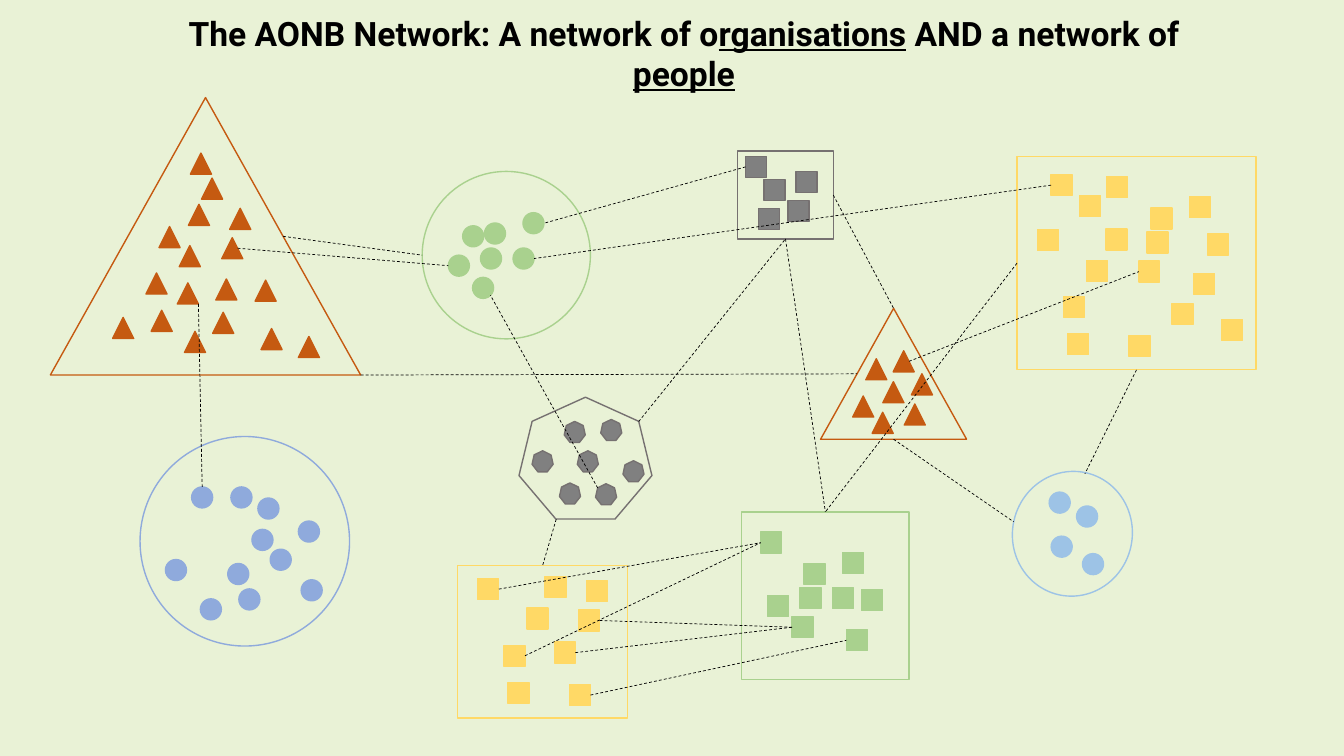
from lxml.etree import SubElement
from pptx import Presentation
from pptx.dml.color import RGBColor
from pptx.enum.dml import MSO_LINE
from pptx.enum.shapes import MSO_CONNECTOR, MSO_SHAPE as SHAPE
from pptx.enum.text import MSO_ANCHOR, PP_ALIGN
from pptx.oxml.ns import qn
from pptx.util import Cm, Pt

MEMBER_SIZE = 0.53

# name: (shape, fill, line, rotation, frame box, member offsets from the frame), in cm
ORGANISATIONS = {
    "green circle": (SHAPE.OVAL, "A9D18E", "A9D18E", 0, (10.64, 4.32, 4.24, 4.22), [
        (1.02, 1.37), (0.66, 2.11), (1.47, 1.93), (1.57, 1.3), (2.29, 1.93),
        (1.27, 2.67), (2.54, 1.04)]),
    "blue circle": (SHAPE.OVAL, "8FAADC", "8FAADC", 0, (3.53, 11, 5.28, 5.28), [
        (1.3, 1.27), (0.64, 3.1), (1.52, 4.09), (2.29, 1.27), (3.28, 2.84), (2.49, 3.84),
        (2.97, 1.55), (4.06, 3.61), (2.82, 2.34), (3.99, 2.13), (2.21, 3.2)]),
    "green square": (SHAPE.RECTANGLE, "A9D18E", "A9D18E", 0, (18.69, 12.9, 4.22, 4.22), [
        (0.48, 0.51), (0.66, 2.11), (1.47, 1.91), (1.57, 1.3), (2.29, 1.91),
        (1.27, 2.64), (2.54, 1.02), (2.64, 2.97), (3.02, 1.96)]),
    "large yellow": (SHAPE.RECTANGLE, "FFD966", "FFD966", 0, (25.63, 3.94, 6.02, 5.38), [
        (2.26, 0.51), (1.75, 2.62), (3.28, 1.91), (3.38, 1.3), (3.91, 3.71), (3.07, 2.64),
        (4.34, 1.02), (4.45, 2.95), (4.8, 1.96), (1.27, 4.47), (1.17, 3.53), (5.16, 4.11),
        (2.82, 4.52), (0.51, 1.85), (0.86, 0.46), (1.57, 0.99), (2.24, 1.83)]),
    "pale circle": (SHAPE.OVAL, "9DC3E6", "9DC3E6", 102.3, (25.45, 11.94, 3.15, 3.02), [
        (1.68, 0.81), (1.04, 1.57), (0.99, 0.46), (1.83, 2.01)]),
    "large triangle": (SHAPE.ISOSCELES_TRIANGLE, "C55A11", "C55A11", 0, (1.27, 2.46, 7.82, 6.99), [
        (3.53, 1.4), (3.25, 3.73), (4.52, 2.79), (2.74, 3.25), (5.16, 4.6), (4.32, 3.53),
        (5.31, 5.82), (3.38, 5.89), (4.17, 4.57), (2.54, 5.36), (2.41, 4.42), (6.25, 6.02),
        (4.09, 5.41), (3.2, 4.67), (1.57, 5.54), (3.81, 2.03), (3.48, 2.69)]),
    "grey square": (SHAPE.RECTANGLE, "808080", "767171", 0, (18.59, 3.81, 2.41, 2.21), [
        (0.66, 0.71), (1.47, 0.51), (0.2, 0.13), (1.27, 1.24), (0.53, 1.45)]),
    "small yellow": (SHAPE.RECTANGLE, "FFD966", "FFD966", 0, (11.53, 14.25, 4.29, 3.84), [
        (1.75, 1.07), (3.25, 0.38), (2.44, 1.93), (3.05, 1.12), (1.27, 2.95),
        (1.17, 2.01), (2.82, 3), (0.51, 0.33), (2.21, 0.28)]),
    "heptagon": (SHAPE.HEPTAGON, "808080", "767171", 0, (13.08, 10.01, 3.35, 3.07), [
        (2.06, 0.56), (1.47, 1.35), (0.33, 1.35), (1.93, 2.18), (1.02, 2.16),
        (1.14, 0.61), (2.62, 1.6)]),
    "small triangle": (SHAPE.ISOSCELES_TRIANGLE, "C55A11", "C55A11", 0, (20.68, 7.77, 3.68, 3.3), [
        (0.81, 2.21), (1.3, 2.62), (2.11, 2.41), (2.29, 1.65), (1.14, 1.27),
        (1.83, 1.07), (1.57, 1.85)]),
}

# Places on a shape, as fractions of its width and height
TOP, LEFT, BOTTOM, RIGHT = (0.5, 0), (0, 0.5), (0.5, 1), (1, 0.5)
LEFT_SLOPE, RIGHT_SLOPE, CORNER = (0.25, 0.5), (0.75, 0.5), (1, 1)

# Each end: organisation, part (0 is the frame, then the members), place
LINKS = [
    (("large triangle", 0, RIGHT_SLOPE), ("green circle", 0, LEFT)),
    (("large triangle", 0, CORNER), ("small triangle", 0, LEFT_SLOPE)),
    (("grey square", 0, BOTTOM), ("green square", 0, TOP)),
    (("large yellow", 0, LEFT), ("green square", 0, TOP)),
    (("large yellow", 0, BOTTOM), ("pale circle", 0, (0.6, 0))),
    (("heptagon", 0, (0.28, 1)), ("small yellow", 0, TOP)),
    (("heptagon", 4, (0.1, 0.2)), ("green circle", 6, (0.85, 0.85))),
    (("grey square", 3, LEFT), ("green circle", 7, RIGHT)),
    (("large yellow", 15, LEFT), ("green circle", 5, RIGHT)),
    (("small triangle", 0, BOTTOM), ("pale circle", 0, (0.03, 0.4))),
    (("heptagon", 0, (0.9, 0.2)), ("grey square", 0, BOTTOM)),
    (("small triangle", 6, RIGHT_SLOPE), ("large yellow", 6, LEFT)),
    (("large triangle", 6, RIGHT_SLOPE), ("green circle", 2, LEFT)),
    (("large triangle", 14, CORNER), ("blue circle", 1, TOP)),
    (("small yellow", 8, RIGHT), ("green square", 1, LEFT)),
    (("small yellow", 7, RIGHT), ("green square", 8, LEFT)),
    (("small yellow", 3, RIGHT), ("green square", 6, LEFT)),
    (("small yellow", 6, RIGHT), ("green square", 1, LEFT)),
    (("small yellow", 4, RIGHT), ("green square", 6, LEFT)),
    (("grey square", 0, RIGHT), ("small triangle", 0, TOP)),
]


def color(value):
    return RGBColor.from_string(value)


def add_title(slide, box):
    title = slide.shapes.title
    title.left, title.top, title.width, title.height = [Cm(length) for length in box]
    frame = title.text_frame
    frame.word_wrap = True
    frame.vertical_anchor = MSO_ANCHOR.TOP
    para = frame.paragraphs[0]
    para.alignment = PP_ALIGN.CENTER
    para.line_spacing = 1.0
    para.font.name = "Roboto"
    para.font.size = Pt(24)
    para.font.bold = True
    para.font.color.rgb = color("000000")
    for text, underlined in [("The AONB Network: A network of o", False), ("rganisations", True),
                             (" AND a network of ", False), ("people", True)]:
        span = para.add_run()
        span.text = text
        span.font.underline = underlined


def add_outline(group, kind, box, line, rotation):
    shape = group.shapes.add_shape(kind, *[Cm(length) for length in box])
    shape.shadow.inherit = False
    shape.rotation = rotation
    shape.fill.background()
    shape.line.color.rgb = color(line)
    shape.line.width = Pt(1)
    return shape


def add_organisation(slide, kind, fill, line, rotation, box, offsets):
    """Draw a frame and its members as a group; return them, frame first."""
    group = slide.shapes.add_group_shape()
    parts = [add_outline(group, kind, box, line, rotation)]
    left, top = box[:2]
    for across, down in offsets:
        member_box = (left + across, top + down, MEMBER_SIZE, MEMBER_SIZE)
        member = add_outline(group, kind, member_box, line, rotation)
        member.fill.solid()
        member.fill.fore_color.rgb = color(fill)
        parts.append(member)
    return parts


def point_on(shape, place):
    across, down = place
    return int(shape.left + across * shape.width), int(shape.top + down * shape.height)


def add_link(slide, start, end):
    link = slide.shapes.add_connector(MSO_CONNECTOR.STRAIGHT, *start, *end)
    link.line.color.rgb = color("000000")
    link.line.width = Pt(0.5)
    link.line.dash_style = MSO_LINE.DASH
    SubElement(link._element.spPr, qn("a:effectLst"))


def build_network_slide(deck):
    slide = deck.slides.add_slide(deck.slide_layouts[5])
    slide.background.fill.solid()
    slide.background.fill.fore_color.rgb = color("E9F2D6")
    add_title(slide, (3.28, 0.2, 27.91, 2.24))
    parts = {name: add_organisation(slide, *details) for name, details in ORGANISATIONS.items()}
    for link in LINKS:
        start, end = [point_on(parts[name][part], place) for name, part, place in link]
        add_link(slide, start, end)


def main():
    deck = Presentation()
    deck.slide_width, deck.slide_height = Cm(33.87), Cm(19.05)
    build_network_slide(deck)
    deck.save("out.pptx")


if __name__ == "__main__":
    main()
